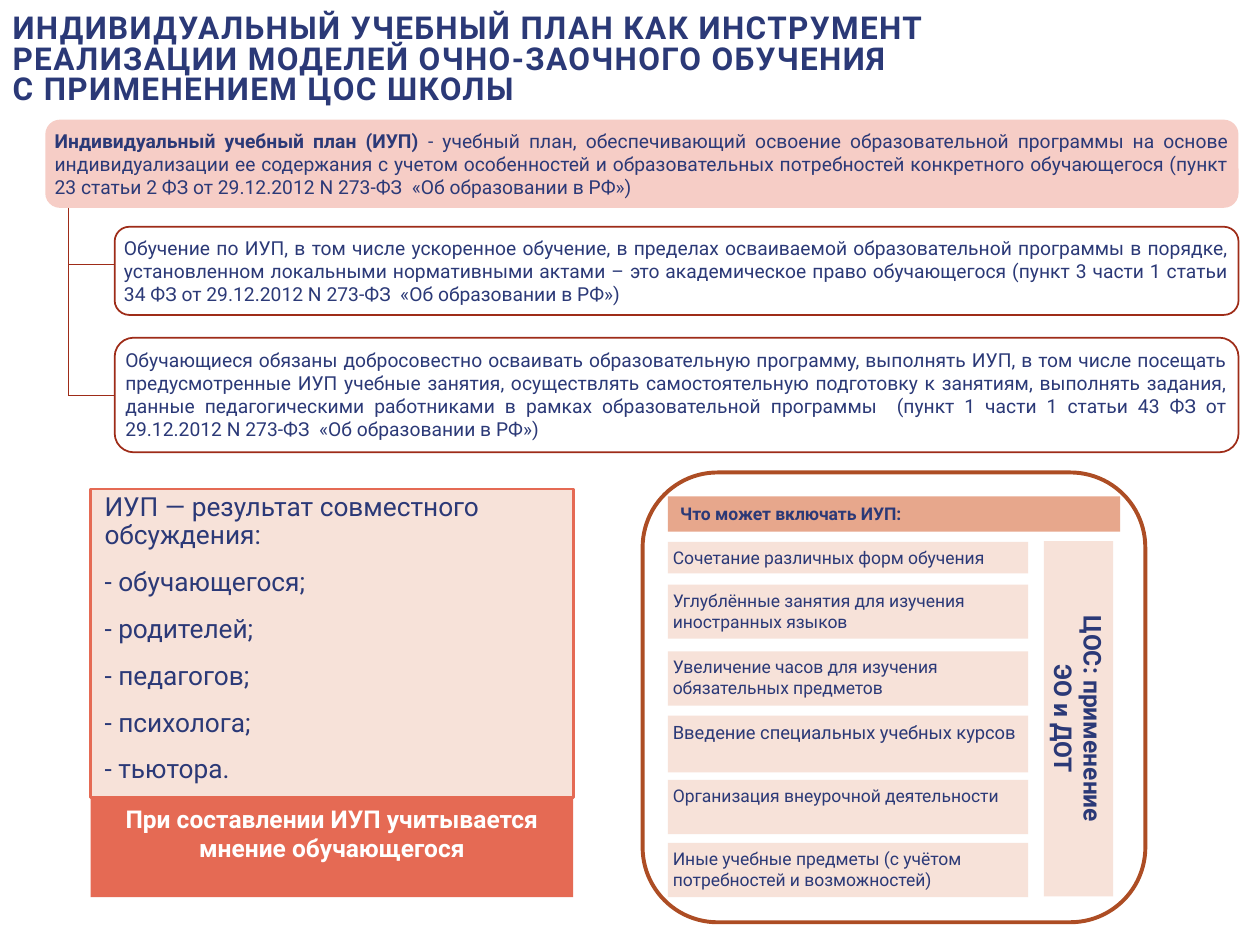
from lxml import etree
from pptx import Presentation
from pptx.dml.color import RGBColor
from pptx.enum.shapes import MSO_CONNECTOR, MSO_SHAPE
from pptx.enum.text import MSO_ANCHOR, MSO_AUTO_SIZE, PP_ALIGN
from pptx.oxml.ns import qn
from pptx.util import Inches, Pt

RECT, ROUNDED = MSO_SHAPE.RECTANGLE, MSO_SHAPE.ROUNDED_RECTANGLE
STRAIGHT = MSO_CONNECTOR.STRAIGHT
LEFT, CENTER, JUSTIFY = PP_ALIGN.LEFT, PP_ALIGN.CENTER, PP_ALIGN.JUSTIFY
TOP, MIDDLE = MSO_ANCHOR.TOP, MSO_ANCHOR.MIDDLE
NO_AUTOFIT = MSO_AUTO_SIZE.NONE
LEFT_SIDE = 1

NAVY = RGBColor(0x2B, 0x39, 0x77)
WHITE = RGBColor(0xFF, 0xFF, 0xFF)
PINK = RGBColor(0xF6, 0xCD, 0xC6)
CREAM = RGBColor(0xF7, 0xE2, 0xD9)
PEACH = RGBColor(0xE7, 0xA7, 0x8C)
CORAL = RGBColor(0xE5, 0x6A, 0x54)
MAROON = RGBColor(0x9E, 0x2C, 0x18)
BROWN = RGBColor(0xAD, 0x4D, 0x24)
FONT = "Roboto"

prs = Presentation()
prs.slide_width, prs.slide_height = Inches(10), Inches(7.5)
COL = prs.slide_width / 100
ROW = prs.slide_height / 75
slide = prs.slides.add_slide(prs.slide_layouts[5])


def add_box(kind, area, fill=None, line=None, line_width=1, text="", size=10,
            color=NAVY, bold=False, align=LEFT, inset=0.04):
    left, top, width, height = area
    box = slide.shapes.add_shape(kind, round(left * COL), round(top * ROW),
                                 round(width * COL), round(height * ROW))
    box.shadow.inherit = False
    if fill is None:
        box.fill.background()
    else:
        box.fill.solid()
        box.fill.fore_color.rgb = fill
    if line is None:
        box.line.fill.background()
    else:
        box.line.color.rgb = line
        box.line.width = Pt(line_width)
    frame = box.text_frame
    frame.word_wrap = True
    frame.vertical_anchor = TOP
    frame.margin_left = frame.margin_right = Inches(inset)
    frame.margin_top = frame.margin_bottom = Inches(min(inset, 0.05))
    frame.text = text
    for paragraph in frame.paragraphs:
        paragraph.alignment = align
        for run in paragraph.runs:
            run.font.name, run.font.size = FONT, Pt(size)
            run.font.bold, run.font.color.rgb = bold, color
    return box


def add_branch(x1, y1, x2, y2):
    branch = slide.shapes.add_connector(STRAIGHT, round(x1 * COL), round(y1 * ROW),
                                        round(x2 * COL), round(y2 * ROW))
    branch.line.color.rgb = MAROON
    branch.line.width = Pt(0.5)
    etree.SubElement(branch._element.spPr, qn("a:effectLst"))
    return branch


title = slide.shapes.title
title.left, title.top = 0, round(0.9 * ROW)
title.width, title.height = round(81.6 * COL), round(7.9 * ROW)
title.text_frame.text = (
    "ИНДИВИДУАЛЬНЫЙ УЧЕБНЫЙ ПЛАН КАК ИНСТРУМЕНТ РЕАЛИЗАЦИИ МОДЕЛЕЙ "
    "ОЧНО-ЗАОЧНОГО ОБУЧЕНИЯ \vС ПРИМЕНЕНИЕМ ЦОС ШКОЛЫ")
title.text_frame.word_wrap = True
title.text_frame.auto_size = NO_AUTOFIT
title.text_frame.vertical_anchor = MIDDLE
heading = title.text_frame.paragraphs[0]
heading.alignment = LEFT
heading.line_spacing = 0.8
for run in heading.runs:
    run.font.name, run.font.size = FONT, Pt(18)
    run.font.bold, run.font.color.rgb = True, NAVY
    run._r.get_or_add_rPr().set("spc", "80")

TERM = "Индивидуальный учебный план (ИУП) "
definition = add_box(ROUNDED, (3.6, 9.5, 94.7, 7), PINK, text=TERM, size=11,
                     bold=True, align=JUSTIFY)
meaning = definition.text_frame.paragraphs[0].add_run()
meaning.text = (
    "- учебный план, обеспечивающий освоение образовательной программы на основе "
    "индивидуализации ее содержания с учетом особенностей и образовательных "
    "потребностей конкретного обучающегося (пункт 23 статьи 2 ФЗ от 29.12.2012 "
    "N 273-ФЗ  «Об образовании в РФ»)")
meaning.font.name, meaning.font.size = FONT, Pt(11)
meaning.font.bold, meaning.font.color.rgb = False, NAVY

RIGHT = (
    "Обучение по ИУП, в том числе ускоренное обучение, в пределах осваиваемой "
    "образовательной программы в порядке, установленном локальными нормативными "
    "актами – это академическое право обучающегося (пункт 3 части 1 статьи 34 ФЗ "
    "от 29.12.2012 N 273-ФЗ  «Об образовании в РФ»)")
DUTY = (
    "Обучающиеся обязаны добросовестно осваивать образовательную программу, "
    "выполнять ИУП, в том числе посещать предусмотренные ИУП учебные занятия, "
    "осуществлять самостоятельную подготовку к занятиям, выполнять задания, данные "
    "педагогическими работниками в рамках образовательной программы  (пункт 1 "
    "части 1 статьи 43 ФЗ от 29.12.2012 N 273-ФЗ  «Об образовании в РФ»)")
TRUNK, NORMS = 5.4, 9.1
add_box(ROUNDED, (NORMS, 18, 89.2, 7), WHITE, MAROON, 1, RIGHT, 11, align=JUSTIFY)
duty = add_box(ROUNDED, (NORMS, 26.8, 89.2, 9.1), WHITE, MAROON, 1, DUTY, 11,
               align=JUSTIFY)
duty_middle = 26.8 + 9.1 / 2
add_branch(TRUNK, 16.5, TRUNK, duty_middle)
add_branch(TRUNK, 21, NORMS, 21)
add_branch(TRUNK, duty_middle, NORMS, duty_middle).end_connect(duty, LEFT_SIDE)

participants = ["ИУП — результат совместного обсуждения:", "- обучающегося;",
                "- родителей;", "- педагогов;", "- психолога;", "- тьютора."]
discussion = add_box(RECT, (7.2, 38.8, 38.3, 24.5), CREAM, CORAL, 1.5,
                     "\n".join(participants), 15)
discussion.text_frame.margin_left = Inches(0.11)
for index, paragraph in enumerate(discussion.text_frame.paragraphs):
    paragraph.line_spacing = 0.9
    paragraph.space_before = Pt(9 if index else 0)
    paragraph.space_after = Pt(1.5)
add_box(RECT, (7.2, 63.3, 38.3, 7.9), CORAL,
        text="При составлении ИУП учитывается мнение обучающегося",
        size=14, color=WHITE, bold=True, align=CENTER, inset=0.1)

OPTIONS = 53
add_box(RECT, (OPTIONS, 39.4, 35.9, 2.8), PEACH, text="Что может включать ИУП:",
        bold=True, inset=0.1)
options = [
    (43, 2.5, 10, "Сочетание различных форм обучения"),
    (46.4, 4.3, 10, "Углублённые занятия для изучения иностранных языков"),
    (51.7, 4.3, 10, "Увеличение часов для изучения обязательных предметов"),
    (56.8, 4.5, 10.5, "Введение специальных учебных курсов"),
    (61.9, 4.3, 10, "Организация внеурочной деятельности"),
    (66.9, 4.3, 10, "Иные учебные предметы (с учётом потребностей и возможностей)"),
]
for top, height, size, option in options:
    add_box(RECT, (OPTIONS, top, 28.6, height), CREAM, text=option, size=size)
platform = add_box(RECT, (71.5, 54.3, 28.2, 5.5), CREAM,
                   text="ЦОС: применение\nЭО и ДОТ", size=14, bold=True, align=CENTER)
platform.rotation = 90
add_box(ROUNDED, (51, 37.5, 39.9, 35.7), line=BROWN, line_width=2.25)

prs.save("out.pptx")
